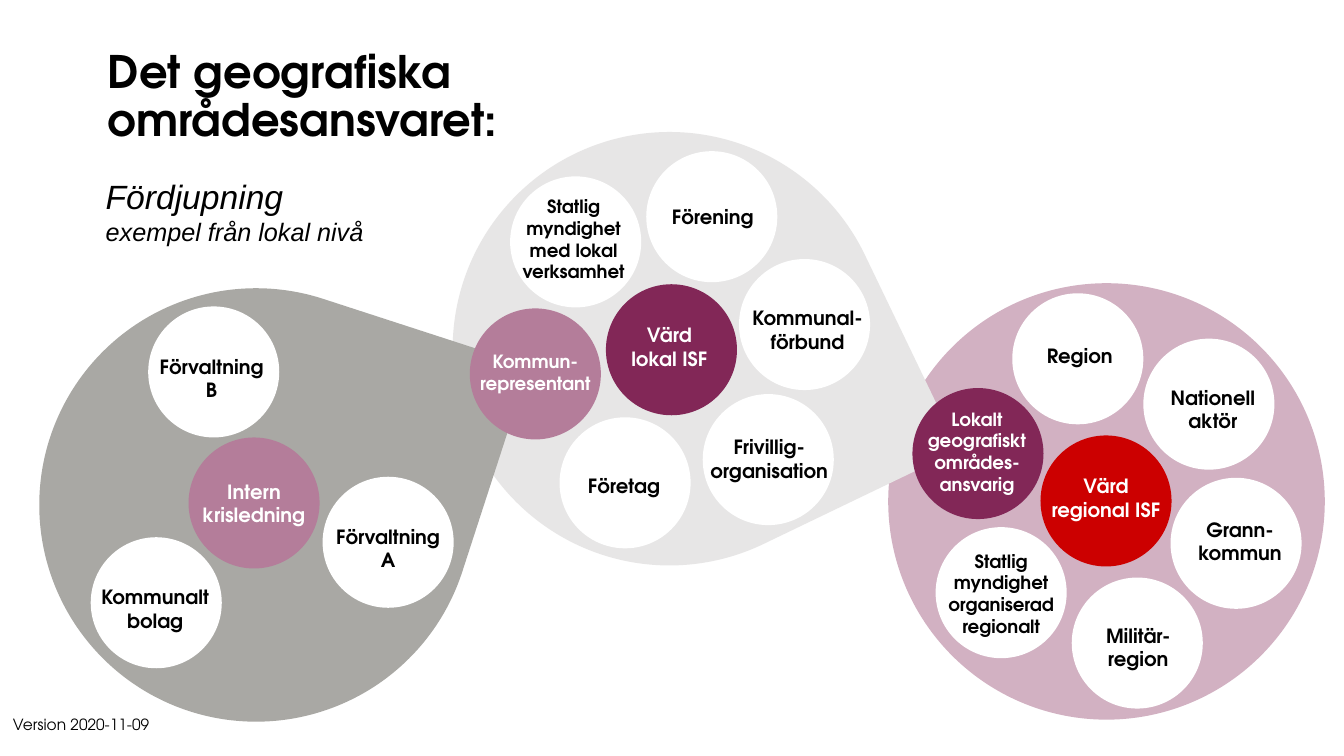
from pptx import Presentation
from pptx.dml.color import RGBColor
from pptx.enum.shapes import MSO_SHAPE
from pptx.enum.text import MSO_ANCHOR, PP_ALIGN
from pptx.util import Inches, Pt

THEME = {
    "head": "TeX Gyre Adventor", "body": "Arial",
    "black": "000000", "white": "FFFFFF", "grey": "A9A8A4", "light": "E7E6E6",
    "pink": "D2B1C2", "mauve": "B47D9A", "plum": "822757", "red": "CC0000",
    "title": 32, "lead": 24, "sub": 18, "label": 14, "small": 13, "note": 11,
}
DISC = 1.3  # diameter of every small circle

TITLE = "Det geografiska\nområdesansvaret:"
LEAD = [("Fördjupning", "lead"), ("exempel från lokal nivå", "sub")]
NOTE = "Version 2020-11-09"

# Large areas: shape, left, top, size, rotation, fill
AREAS = [
    (MSO_SHAPE.OVAL, 8.81, 2.81, 4.33, 0, "pink"),
    (MSO_SHAPE.TEAR, 4.49, 1.31, 4.3, 64.3, "light"),
    (MSO_SHAPE.TEAR, 0.39, 2.86, 4.3, 18, "grey"),
]

# Circles: left, top, label shift right, label shift down, fill, type size, label
DISCS = [
    # Internal crisis management
    (1.47, 3.04, -0.02, 0.06, "white", "label", "Förvaltning\nB"),
    (3.2, 4.73, 0, 0.06, "white", "label", "Förvaltning\nA"),
    (0.9, 5.33, -0.01, 0.06, "white", "label", "Kommunalt\nbolag"),
    (1.87, 4.34, 0, 0, "mauve", "label", "Intern\nkrisledning"),
    # Local level
    (5.06, 1.75, -0.02, -0.03, "white", "small",
     "Statlig\nmyndighet\nmed lokal\nverksamhet"),
    (6.41, 1.5, 0.01, 0, "white", "label", "Förening"),
    (7.33, 2.57, 0.03, 0.05, "white", "label", "Kommunal-\nförbund"),
    (6.97, 3.91, 0.01, -0.01, "white", "label", "Frivillig-\norganisation"),
    (5.55, 4.14, -0.01, 0.03, "white", "label", "Företag"),
    (4.66, 3.06, 0, -0.02, "mauve", "small", "Kommun-\nrepresentant"),
    (6.01, 2.82, -0.02, -0.03, "plum", "label", "Värd\nlokal ISF"),
    # Regional level
    (10.04, 2.91, 0.02, -0.03, "white", "label", "Region"),
    (11.34, 3.36, 0.04, 0.05, "white", "label", "Nationell\naktör"),
    (11.61, 4.74, 0.04, -0.02, "white", "label", "Grann-\nkommun"),
    (10.63, 5.73, 0.01, 0.04, "white", "label", "Militär-\nregion"),
    (9.28, 5.23, 0, 0.01, "white", "small",
     "Statlig\nmyndighet\norganiserad\nregionalt"),
    (10.32, 4.32, 0, -0.03, "red", "label", "Värd\nregional ISF"),
    (9.05, 3.85, -0.01, -0.02, "plum", "small",
     "Lokalt\ngeografiskt\nområdes-\nansvarig"),
]


def paint(hue):
    return RGBColor.from_string(THEME[hue])


def write(frame, parts, font="head", hue="black", bold=False, slant=False,
          align=PP_ALIGN.LEFT, anchor=MSO_ANCHOR.TOP, wrap=True, pitch=None):
    """Fill a frame with one paragraph for each (text, size) pair."""
    frame.word_wrap = wrap
    frame.vertical_anchor = anchor
    for i, (text, size) in enumerate(parts):
        para = frame.paragraphs[0] if i == 0 else frame.add_paragraph()
        para.text = text
        para.alignment = align
        if pitch:
            para.line_spacing = pitch
        for run in para.runs:
            run.font.name = THEME[font]
            run.font.size = Pt(THEME[size])
            run.font.bold = bold
            run.font.italic = slant
            run.font.color.rgb = paint(hue)


def shape(slide, kind, left, top, size, hue, turn=0):
    item = slide.shapes.add_shape(
        kind, Inches(left), Inches(top), Inches(size), Inches(size))
    item.rotation = turn
    item.shadow.inherit = False
    item.fill.solid()
    item.fill.fore_color.rgb = paint(hue)
    item.line.fill.background()
    return item


def box(slide, *place):
    return slide.shapes.add_textbox(*map(Inches, place)).text_frame


def main():
    deck = Presentation()
    deck.slide_width, deck.slide_height = Inches(13.33), Inches(7.5)
    slide = deck.slides.add_slide(deck.slide_layouts[6])

    # Headings
    write(box(slide, 0.97, 0.44, 9.38, 1.06), [(TITLE, "title")],
          bold=True, pitch=0.9)
    write(box(slide, 0.95, 1.7, 3.82, 0.8), LEAD, font="body", slant=True)

    # Areas
    for kind, left, top, size, turn, hue in AREAS:
        shape(slide, kind, left, top, size, hue, turn)

    # Labelled circles; uneven margins shift a label off centre
    for left, top, right, down, hue, size, text in DISCS:
        frame = shape(slide, MSO_SHAPE.OVAL, left, top, DISC, hue).text_frame
        frame.margin_left = Inches(max(0, 2 * right))
        frame.margin_right = Inches(max(0, -2 * right))
        frame.margin_top = Inches(max(0, 2 * down))
        frame.margin_bottom = Inches(max(0, -2 * down))
        write(frame, [(text, size)], bold=True, wrap=False,
              hue="black" if hue == "white" else "white",
              align=PP_ALIGN.CENTER, anchor=MSO_ANCHOR.MIDDLE)

    # Version note
    write(box(slide, 0, 6.93, 1.61, 0.52), [(NOTE, "note")],
          align=PP_ALIGN.CENTER, anchor=MSO_ANCHOR.MIDDLE)

    deck.save("out.pptx")


if __name__ == "__main__":
    main()
